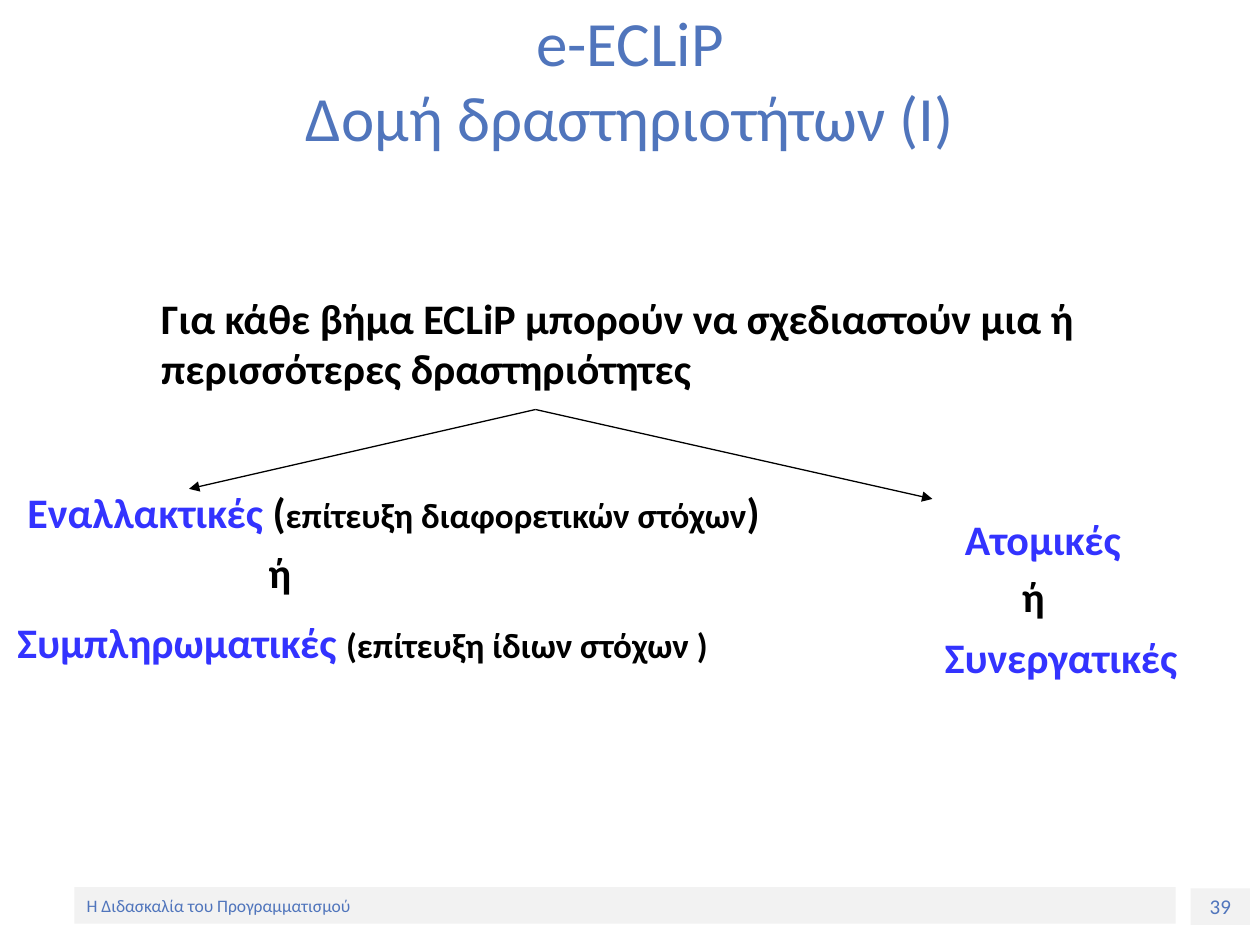
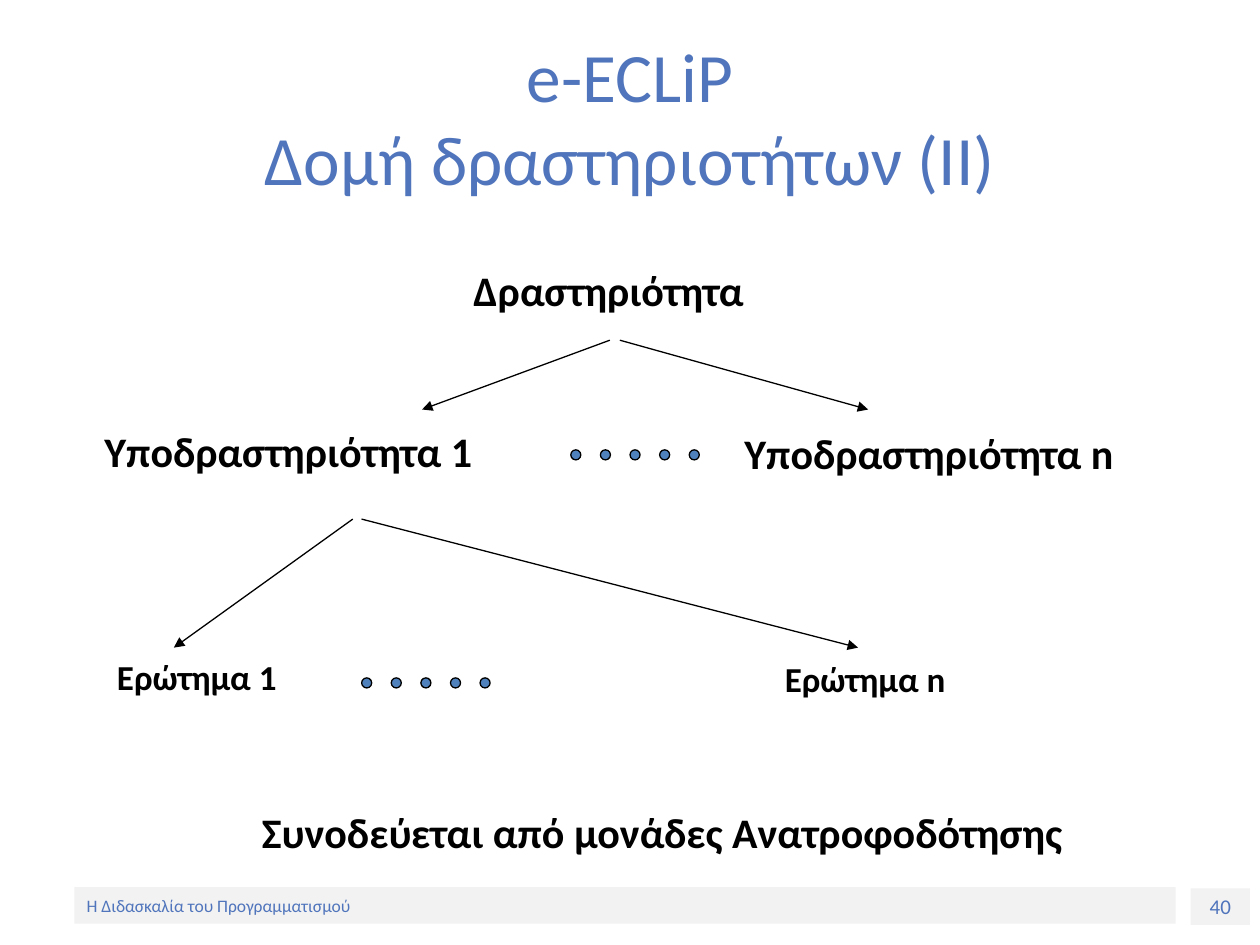
"""Build two slides on how e-ECLiP activities are structured."""
from dataclasses import dataclass

from lxml import etree
from pptx import Presentation
from pptx.dml.color import RGBColor
from pptx.enum.shapes import MSO_CONNECTOR, MSO_SHAPE
from pptx.enum.text import MSO_ANCHOR, PP_ALIGN
from pptx.oxml.ns import qn
from pptx.util import Inches, Pt

RECT, OVAL = MSO_SHAPE.RECTANGLE, MSO_SHAPE.OVAL
STRAIGHT = MSO_CONNECTOR.STRAIGHT
TOP, MIDDLE = MSO_ANCHOR.TOP, MSO_ANCHOR.MIDDLE
LEFT, CENTER = PP_ALIGN.LEFT, PP_ALIGN.CENTER


@dataclass(frozen=True)
class Theme:
    font: str = "Calibri"
    heading: str = "5075BC"
    band: str = "F2F2F2"
    ink: str = "000000"
    accent: str = "3333FF"
    dot: str = "4F81BD"
    body: float = 24
    detail: float = 20
    page: float = 12
    footer: float = 10
    stroke: float = 0.75


THEME = Theme()
FOOTER = "Η Διδασκαλία του Προγραμματισμού"
FOOTER_BOX = (0.59, 7.04, 8.74, 0.29)
PAGE_BOX = (9.45, 7.05, 0.47, 0.29)
DOT_SIZE, DOT_COUNT, DOTS_SPAN = 0.08, 5, 0.94

INK = (THEME.ink, THEME.body)
ACCENT = (THEME.accent, THEME.body)
DETAIL = (THEME.ink, THEME.detail)

SLIDES = [
    {
        "page": 39,
        "title": ["e-ECLiP", "Δομή δραστηριοτήτων (I)"],
        "title_top": 0,
        "title_size": 36,
        "wrapped": [
            ((1.18, 2.27, 8.11, 0.91),
             [("Για κάθε βήμα ECLiP μπορούν να σχεδιαστούν μια ή περισσότερες δραστηριότητες", INK)]),
            ((7.56, 4.03, 1.57, 0.5), [("Ατομικές", ACCENT)]),
            ((7.4, 4.96, 2.28, 0.51), [("Συνεργατικές", ACCENT)]),
            ((0.04, 4.84, 6.64, 0.5),
             [("Συμπληρωματικές ", ACCENT), ("(επίτευξη ίδιων στόχων )", DETAIL)]),
            ((0.12, 3.81, 6.93, 0.5),
             [("Εναλλακτικές ", ACCENT), ("(", INK),
              ("επίτευξη διαφορετικών στόχων", DETAIL), (")", INK)]),
        ],
        "single_line": [],
        "alternatives": [(2.13, 4.34, 0.18, 0.4), (8.11, 4.53, 0.18, 0.4)],
        "arrows": [((4.25, 3.25), (1.5, 3.88)), ((4.25, 3.25), (7.4, 3.96))],
        "dot_rows": [],
    },
    {
        "page": 40,
        "title": ["e-ECLiP", "Δομή δραστηριοτήτων (ΙΙ)"],
        "title_top": 0.3,
        "title_size": 39.6,
        "wrapped": [],
        "single_line": [
            ((3.66, 2.05, 2.43, 0.5), [("Δραστηριότητα", INK)]),
            ((0.73, 3.33, 3.22, 0.51), [("Υποδραστηριότητα 1", INK)]),
            ((5.81, 3.34, 3.23, 0.51), [("Υποδραστηριότητα n", INK)]),
            ((0.83, 5.15, 1.48, 0.44), [("Ερώτημα 1", DETAIL)]),
            ((6.13, 5.17, 1.49, 0.44), [("Ερώτημα n", DETAIL)]),
            ((1.98, 6.35, 6.6, 0.51), [("Συνοδεύεται από μονάδες Ανατροφοδότησης", INK)]),
        ],
        "alternatives": [],
        "arrows": [
            ((4.84, 2.7), (3.35, 3.25)), ((4.92, 2.7), (6.89, 3.25)),
            ((2.8, 4.12), (1.38, 5.14)), ((2.87, 4.12), (6.81, 5.14)),
        ],
        "dot_rows": [(4.53, 3.57), (2.87, 5.38)],
    },
]


def inches(box):
    return [Inches(length) for length in box]


def style(font, color, size, bold=False):
    font.name = THEME.font
    font.size = Pt(size)
    font.bold = bold
    font.color.rgb = RGBColor.from_string(color)


def add_preset(slide, preset, box, fill):
    shape = slide.shapes.add_shape(preset, *inches(box))
    shape.shadow.inherit = False
    shape.fill.solid()
    shape.fill.fore_color.rgb = RGBColor.from_string(fill)
    return shape


def add_band(slide, box, text, size, align):
    band = add_preset(slide, RECT, box, THEME.band)
    band.line.fill.background()
    band.text_frame.vertical_anchor = MIDDLE
    paragraph = band.text_frame.paragraphs[0]
    paragraph.text = text
    paragraph.alignment = align
    style(paragraph.font, THEME.heading, size)


def add_title(slide, lines, top, size):
    frame = slide.shapes.add_textbox(*inches((0.5, top, 9, 1.25))).text_frame
    frame.word_wrap = True
    frame.vertical_anchor = MIDDLE
    frame.text = "\n".join(lines)
    for paragraph in frame.paragraphs:
        paragraph.alignment = CENTER
        style(paragraph.font, THEME.heading, size)


def add_label(slide, box, pieces, wrap, margin=None):
    frame = slide.shapes.add_textbox(*inches(box)).text_frame
    frame.word_wrap = wrap
    frame.vertical_anchor = TOP
    if margin is not None:
        frame.margin_left = frame.margin_right = Inches(margin)
        frame.margin_top = frame.margin_bottom = Inches(margin)
    paragraph = frame.paragraphs[0]
    if len(pieces) == 1:
        text, look = pieces[0]
        paragraph.text = text
        style(paragraph.font, *look, bold=True)
        return
    for text, look in pieces:
        run = paragraph.add_run()
        run.text = text
        style(run.font, *look, bold=True)


def add_arrow(slide, start, end):
    arrow = slide.shapes.add_connector(STRAIGHT, *inches(start + end))
    arrow.line.color.rgb = RGBColor.from_string(THEME.ink)
    arrow.line.width = Pt(THEME.stroke)
    etree.SubElement(arrow.line._get_or_add_ln(), qn("a:tailEnd"), type="triangle")
    etree.SubElement(arrow._element.spPr, qn("a:effectLst"))


def add_dots(slide, left, top):
    pitch = DOTS_SPAN / (DOT_COUNT - 1)
    for index in range(DOT_COUNT):
        box = (left + index * pitch, top, DOT_SIZE, DOT_SIZE)
        dot = add_preset(slide, OVAL, box, THEME.dot)
        dot.line.color.rgb = RGBColor.from_string(THEME.ink)
        dot.line.width = Pt(THEME.stroke)


def build_slide(deck, content):
    slide = deck.slides.add_slide(deck.slide_layouts[6])
    add_band(slide, PAGE_BOX, str(content["page"]), THEME.page, CENTER)
    add_band(slide, FOOTER_BOX, FOOTER, THEME.footer, LEFT)
    add_title(slide, content["title"], content["title_top"], content["title_size"])
    for box, pieces in content["wrapped"]:
        add_label(slide, box, pieces, wrap=True)
    for box, pieces in content["single_line"]:
        add_label(slide, box, pieces, wrap=False)
    for box in content["alternatives"]:
        add_label(slide, box, [("ή", INK)], wrap=False, margin=0)
    for start, end in content["arrows"]:
        add_arrow(slide, start, end)
    for left, top in content["dot_rows"]:
        add_dots(slide, left, top)


def main():
    deck = Presentation()
    deck.slide_width, deck.slide_height = Inches(10), Inches(7.5)
    for content in SLIDES:
        build_slide(deck, content)
    deck.save("out.pptx")


if __name__ == "__main__":
    main()
